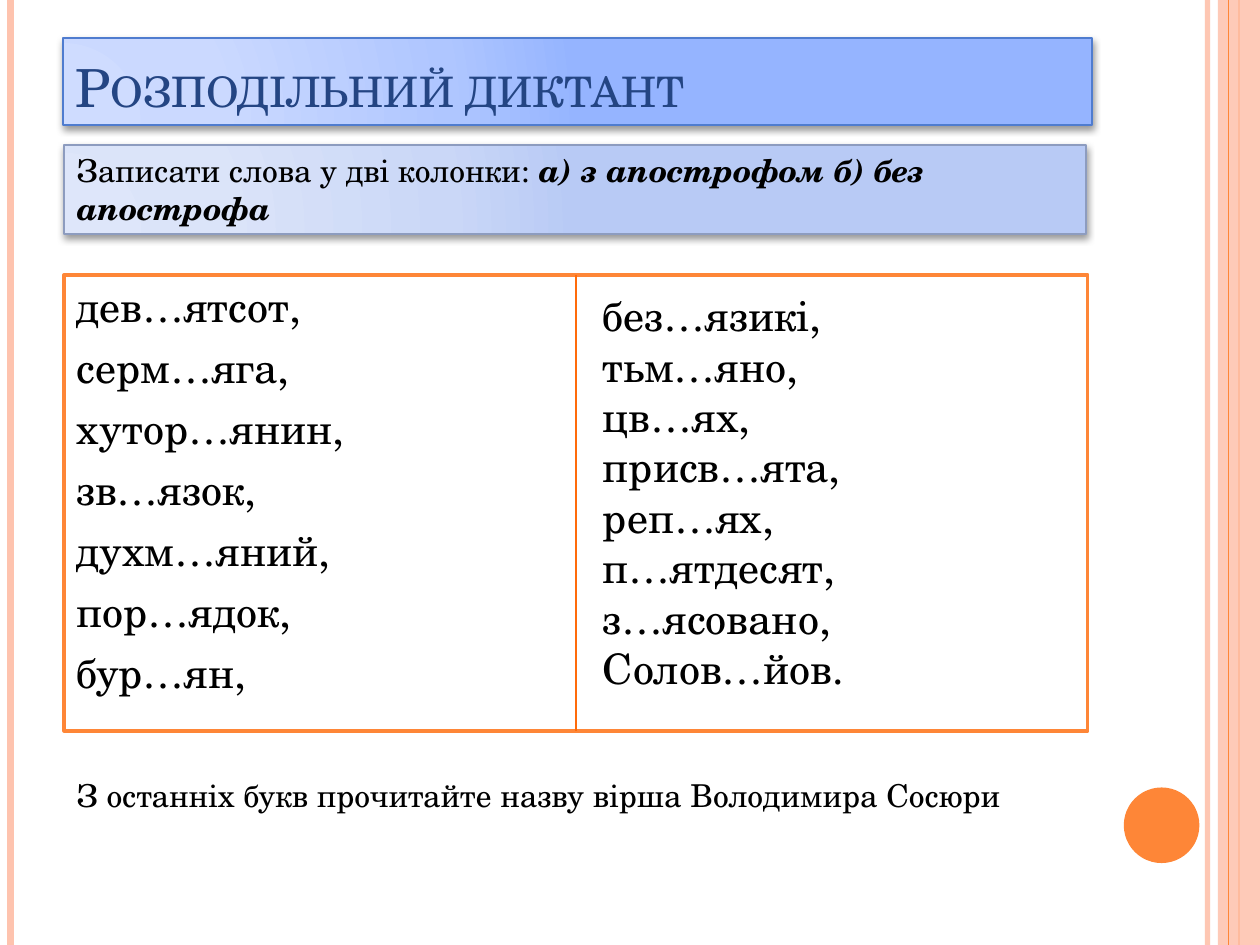
"""Builds a Ukrainian dictation slide with two word columns and a decorated margin."""
import dataclasses

import lxml.etree
import pptx
import pptx.dml.color
import pptx.enum.shapes
import pptx.enum.text
import pptx.oxml.ns
import pptx.util

Pt = pptx.util.Pt
qn = pptx.oxml.ns.qn
SHAPES = pptx.enum.shapes.MSO_SHAPE


@dataclasses.dataclass(frozen=True)
class Theme:
    font: str = "TeX Gyre Schola"
    title_size: int = 30
    word_size: int = 24
    note_size: int = 18
    text: str = "000000"
    title: str = "244583"
    white: str = "FFFFFF"
    orange: str = "FE8637"
    peach: str = "FEC3AE"
    divider: str = "FF6B0A"
    title_line: str = "4F7CCF"
    task_line: str = "8D9CBF"
    title_gradient: tuple = ("CFDCFF", "CBD9FF", "AFC6FF", "95B4FF")
    task_gradient: tuple = ("DEE6FA", "DBE4F9", "CAD7F7", "B8CAF5")


THEME = Theme()
SLIDE_HEIGHT = 540
LEFT_WORDS = ("дев…ятсот,", "серм…яга,", "хутор…янин,", "зв…язок,",
              "духм…яний,", "пор…ядок,", "бур…ян,")
RIGHT_WORDS = ("без…язикі,", "тьм…яно,", "цв…ях,", "присв…ята,",
               "реп…ях,", "п…ятдесят,", "з…ясовано,", "Солов…йов.")


def rgb(color):
    return pptx.dml.color.RGBColor.from_string(color)


def add_node(parent, tag, **attributes):
    node = lxml.etree.SubElement(parent, qn(tag))
    for name, value in attributes.items():
        node.set(name, str(value))
    return node


def set_alpha(properties, percent):
    add_node(next(properties.iter(qn("a:srgbClr"))), "a:alpha", val=percent * 1000)


def set_outline(shape, color, width):
    shape.line.color.rgb = rgb(color)
    shape.line.width = Pt(width)


def add_line(slide, x, top, bottom, color, width, alpha=None):
    line = slide.shapes.add_connector(
        pptx.enum.shapes.MSO_CONNECTOR.STRAIGHT, Pt(x), Pt(top), Pt(x), Pt(bottom))
    set_outline(line, color, width)
    properties = line._element.spPr
    if alpha:
        set_alpha(properties, alpha)
    add_node(properties, "a:effectLst")


def add_filled_shape(slide, kind, box, color, alpha=None):
    shape = slide.shapes.add_shape(kind, *map(Pt, box))
    shape.shadow.inherit = False
    shape.fill.solid()
    shape.fill.fore_color.rgb = rgb(color)
    shape.line.fill.background()
    if alpha:
        set_alpha(shape._element.spPr, alpha)
    return shape


def style_banner(shape, colors, line_color):
    """Gives a banner its radial gradient, outline and soft shadow."""
    shape.fill.gradient()
    set_outline(shape, line_color, 1)
    shape.shadow.inherit = False
    properties = shape._element.spPr
    gradient = properties.find(qn("a:gradFill"))
    for child in list(gradient):
        gradient.remove(child)
    stops = add_node(gradient, "a:gsLst")
    for position, color in zip((0, 30, 75, 100), colors):
        add_node(add_node(stops, "a:gs", pos=position * 1000), "a:srgbClr", val=color)
    circle = add_node(gradient, "a:path", path="circle")
    add_node(circle, "a:fillToRect", l=5000, t=100000, r=120000, b=10000)
    shadow = add_node(properties.find(qn("a:effectLst")), "a:outerShdw",
                      blurRad=Pt(4), dist=Pt(2), dir=5400000, rotWithShape=0)
    add_node(shadow, "a:srgbClr", val="000000")
    set_alpha(shadow, 40)


def add_run(paragraph, text, size, color=THEME.text, emphasis=None):
    run = paragraph.add_run()
    run.text = text
    run.font.name = THEME.font
    run.font.size = Pt(size)
    run.font.color.rgb = rgb(color)
    run.font.bold = run.font.italic = emphasis
    return run


def prepare_frame(shape, anchor=pptx.enum.text.MSO_ANCHOR.TOP):
    frame = shape.text_frame
    frame.word_wrap = True
    frame.auto_size = pptx.enum.text.MSO_AUTO_SIZE.NONE
    frame.vertical_anchor = anchor
    frame.paragraphs[0].alignment = pptx.enum.text.PP_ALIGN.LEFT
    return frame


def write_lines(shape, lines, size, space_before=0):
    frame = prepare_frame(shape)
    for index, line in enumerate(lines):
        paragraph = frame.add_paragraph() if index else frame.paragraphs[0]
        paragraph.alignment = pptx.enum.text.PP_ALIGN.LEFT
        paragraph.space_before = Pt(space_before)
        add_run(paragraph, line, size)


def add_text_box(slide, box, lines, size):
    write_lines(slide.shapes.add_textbox(*map(Pt, box)), lines, size)


def add_margin_decoration(slide):
    add_line(slide, 690, 0, SLIDE_HEIGHT, THEME.peach, 3, alpha=93)
    add_line(slide, 6, 0, SLIDE_HEIGHT, THEME.peach, 4.5)
    add_line(slide, 708, 0, SLIDE_HEIGHT, THEME.orange, 1.5)
    add_filled_shape(slide, SHAPES.RECTANGLE, (696, 0, 24, SLIDE_HEIGHT), THEME.peach, alpha=87)
    add_line(slide, 702, 0, SLIDE_HEIGHT, THEME.orange, 0.75)
    add_filled_shape(slide, SHAPES.OVAL, (642.2, 450, 43.2, 43.2), THEME.orange)


def format_title(slide, text):
    title = slide.shapes.title
    title.left, title.top, title.width, title.height = map(Pt, (36, 21.6, 588.2, 49.7))
    style_banner(title, THEME.title_gradient, THEME.title_line)
    frame = prepare_frame(title, pptx.enum.text.MSO_ANCHOR.BOTTOM)
    run = add_run(frame.paragraphs[0], text, THEME.title_size, THEME.title)
    run.font._element.set("cap", "small")


def add_task(slide, box, instruction, options):
    task = add_filled_shape(slide, SHAPES.RECTANGLE, box, THEME.white)
    style_banner(task, THEME.task_gradient, THEME.task_line)
    paragraph = prepare_frame(task).paragraphs[0]
    add_run(paragraph, instruction, THEME.note_size)
    add_run(paragraph, options, THEME.note_size, emphasis=True)


def add_word_columns(slide):
    left, top, width, height = 36.7, 157, 584.9, 260.6
    frame = add_filled_shape(slide, SHAPES.RECTANGLE, (left, top, width, height), THEME.white)
    set_outline(frame, THEME.orange, 2)
    write_lines(frame, LEFT_WORDS, THEME.word_size, space_before=6)
    add_line(slide, left + width / 2, top, top + height, THEME.divider, 1)
    add_text_box(slide, (337.5, 162, 249, 262), RIGHT_WORDS, THEME.word_size)


def main():
    presentation = pptx.Presentation()
    presentation.slide_width, presentation.slide_height = Pt(720), Pt(SLIDE_HEIGHT)
    slide = presentation.slides.add_slide(presentation.slide_layouts[5])
    add_margin_decoration(slide)
    format_title(slide, "Розподільний диктант")
    add_word_columns(slide)
    add_task(slide, (36.7, 82.8, 584, 51), "Записати слова у дві колонки: ",
             "а) з апострофом б) без апострофа")
    add_text_box(slide, (36.7, 440, 584, 29),
                 ["З останніх букв прочитайте назву вірша Володимира Сосюри"], THEME.note_size)
    presentation.save("out.pptx")


if __name__ == "__main__":
    main()
